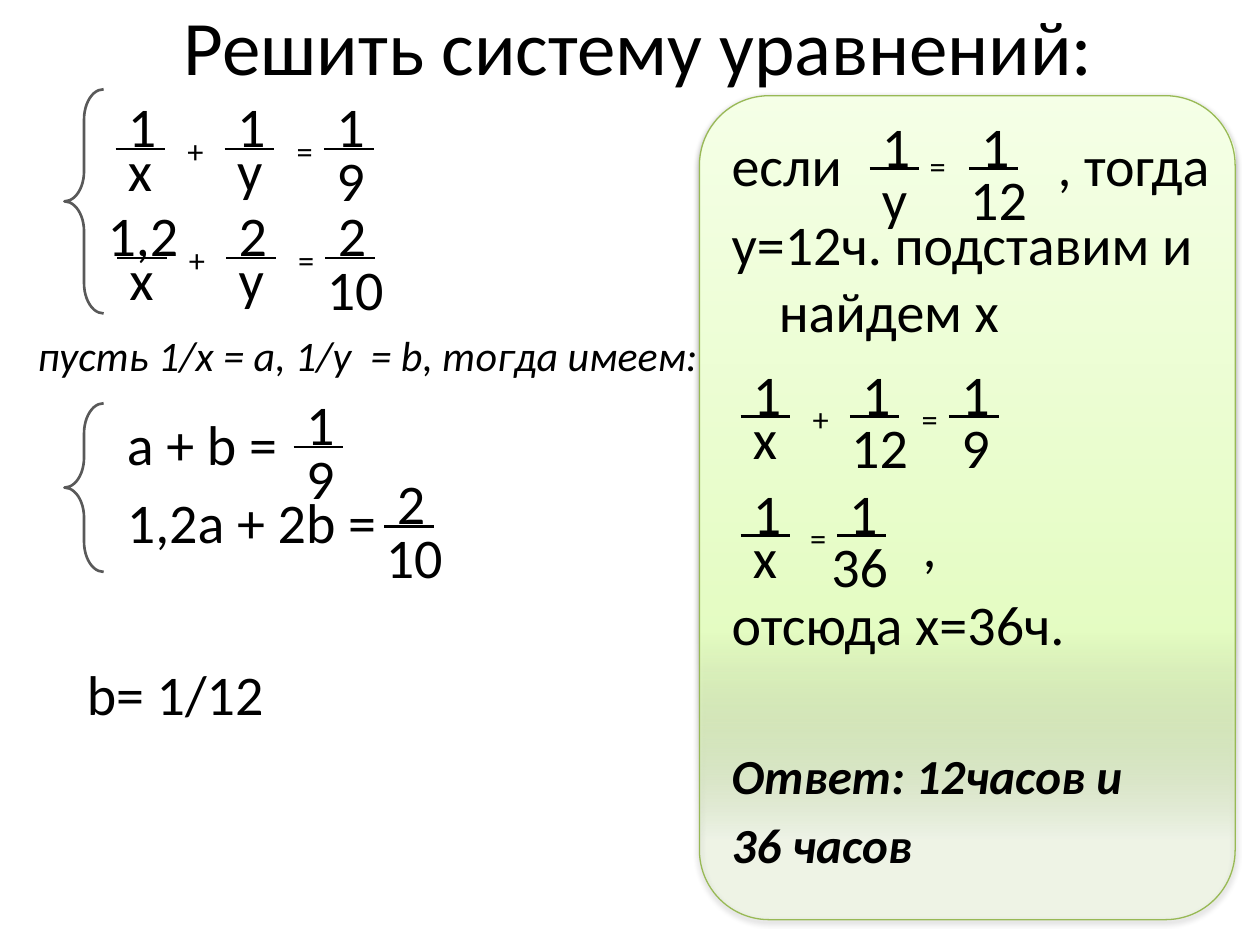
from lxml.etree import SubElement
from pptx import Presentation
from pptx.dml.color import RGBColor
from pptx.enum.shapes import MSO_CONNECTOR, MSO_SHAPE
from pptx.enum.text import MSO_ANCHOR, PP_ALIGN
from pptx.oxml.ns import qn
from pptx.util import Cm, Pt

FONT = "Calibri"
COLORS = {"text": "000000", "brace": "595959", "edge": "98B955"}
# Panel gradient from the bottom up: place %, colour, opacity %
STOPS = [(10, "DAFDA7", 14), (35, "E4FCC2", 100), (100, "F5FFE7", 100)]

TITLE = "Решить систему уравнений:"
HANG = 0.95

# Sums a + b = c: left, bar height, three fractions
SUMS = [
    (2.33, 3.0, [("1", "х"), ("1", "у"), ("1", "9")]),
    (2.36, 5.2, [("1,2", "х"), ("2", "у"), ("2", "10")]),
    (14.93, 8.4, [("1", "х"), ("1", "12"), ("1", "9")]),
]
BARS = (0, 2.2, 4.2)
SIGNS = ((1.2, "+"), (3.4, "="))

# Single fractions: left, bar height, top, bottom, gap below the bar, shift
LOW, HIGH = -0.2, -0.39
SINGLES = [
    (5.92, 9.01, "1", "9", LOW),
    (7.75, 10.61, "2", "10", LOW),
    (17.53, 3.4, "1", "у", LOW),
    (19.53, 3.4, "1", "12", LOW),
    (14.93, 10.8, "1", "х", HIGH),
    (16.87, 10.8, "1", "36", LOW, -0.14),
]
EQUALS = [(18.49, 2.92), (16.08, 10.41)]

# Braces: top, height
BRACES = [(1.8, 4.52), (8.13, 3.4)]

# Free texts: box, lines, size, italic, line spacing
NOTES = [
    ((0.51, 6.52, 14.6, 3.99), ["пусть 1/х = а, 1/у  = b, тогда имеем:"], 24, True, 1),
    ((2.31, 8.13, 5.59, 3.99), ["а + b =", "1,2а + 2b ="], 32, False, 1),
    ((1.5, 13.33, 4.6, 1.6), ["b= 1/12"], 32, False, 0.9),
    ((21.07, 2.51, 4, 1.68), [", тогда"], 32, False, 1),
]

# Panel lines: text, size, bold italic, space before (None: 20 %), margin, indent
PANEL = [
    ("если", 32, False, None, HANG, -HANG),
    ("у=12ч. подставим и найдем х", 32, False, None, HANG, -HANG),
    (",", 32, False, 95.7, 3.85, 0),
    ("отсюда х=36ч.", 32, False, None, HANG, -HANG),
    ("Ответ: 12часов и", 28, True, 50.8, HANG, -HANG),
    ("36 часов", 28, True, None, HANG, -HANG),
]

deck = Presentation()
deck.slide_width, deck.slide_height = Cm(25.4), Cm(19.05)
slide = deck.slides.add_slide(deck.slide_layouts[6])
shapes = slide.shapes


def rgb(name):
    return RGBColor.from_string(COLORS[name])


def frame(x, y, w, h):
    body = shapes.add_textbox(Cm(x), Cm(y), Cm(w), Cm(h)).text_frame
    body.word_wrap = True
    return body


def style(para, size, margin=HANG, indent=-HANG, before=None, tight=1):
    """Set font, indents and spacing of a paragraph."""
    font = para.font
    font.name, font.size, font.color.rgb = FONT, Pt(size), rgb("text")
    props = para._p.get_or_add_pPr()
    props.set("marL", str(Cm(margin)))
    props.set("indent", str(Cm(indent)))
    if tight != 1:
        para.line_spacing = tight
    para.space_before = Pt(before or 0)
    if before is None:
        space = props.find(qn("a:spcBef"))
        space.clear()
        SubElement(space, qn("a:spcPct"), val="20000")


def write(box, lines, size, italic=False, tight=1):
    body = frame(*box)
    for i, line in enumerate(lines):
        para = body.add_paragraph() if i else body.paragraphs[0]
        para.text = line
        style(para, size, tight=tight)
        para.font.italic = italic


def frac(x, y, top, low, gap, shift=0):
    for text, dx, dy in ((top, 0, -1.28), (low, shift, gap)):
        more = len(text) - 1
        write((x + dx - 0.22 * more, y + dy, 1.22 + 0.8 * more, 1.68), [text], 32)
    bar = shapes.add_connector(MSO_CONNECTOR.STRAIGHT, Cm(x), Cm(y), Cm(x + 1), Cm(y))
    bar.line.color.rgb, bar.line.width = rgb("text"), Pt(1.5)
    SubElement(bar._element.spPr, qn("a:effectLst"))


def sign(x, y, text):
    write((x, y, 1, 1), [text], 18.5, tight=0.9)


def panel():
    card = shapes.add_shape(MSO_SHAPE.ROUNDED_RECTANGLE, Cm(14.1), Cm(1.93), Cm(10.8), Cm(16.61))
    card.adjustments[0] = 0.13
    card.line.color.rgb, card.line.width = rgb("edge"), Pt(0.75)
    card.fill.gradient()
    card.fill.gradient_angle = 90
    props = card._element.spPr
    stops = props.find(qn("a:gradFill")).find(qn("a:gsLst"))
    stops.clear()
    for place, tone, alpha in STOPS:
        stop = SubElement(stops, qn("a:gs"), pos=str(place * 1000))
        color = SubElement(stop, qn("a:srgbClr"), val=tone)
        SubElement(color, qn("a:alpha"), val=str(alpha * 1000))
    card.shadow.inherit = False
    shade = SubElement(props.find(qn("a:effectLst")), qn("a:outerShdw"),
                       blurRad=str(Pt(3.1)), dist=str(Pt(1.6)), dir="5400000", rotWithShape="0")
    color = SubElement(shade, qn("a:srgbClr"), val=COLORS["text"])
    SubElement(color, qn("a:alpha"), val="38000")

    body = frame(14.5, 2.51, 10.6, 16.54)
    for i, (text, size, strong, before, margin, indent) in enumerate(PANEL):
        para = body.add_paragraph() if i else body.paragraphs[0]
        para.text = text
        style(para, size, margin, indent, before)
        para.font.bold = para.font.italic = strong


head = frame(1.45, -0.69, 22.86, 3.18)
head.vertical_anchor = MSO_ANCHOR.MIDDLE
para = head.paragraphs[0]
para.text, para.alignment = TITLE, PP_ALIGN.CENTER
style(para, 44, 0, 0, 0)

panel()
for note in NOTES:
    write(*note)
for top, tall in BRACES:
    brace = shapes.add_shape(MSO_SHAPE.LEFT_BRACE, Cm(1.3), Cm(top), Cm(0.79), Cm(tall))
    brace.adjustments[0] = 0.77
    brace.fill.background()
    brace.line.color.rgb, brace.line.width = rgb("brace"), Pt(1.5)
    brace.shadow.inherit = False
for x, y, parts in SUMS:
    for dx, (top, low) in zip(BARS, parts):
        frac(x + dx, y, top, low, HIGH if low.isalpha() else LOW)
    for dx, text in SIGNS:
        sign(x + dx, y - 0.39, text)
for single in SINGLES:
    frac(*single)
for x, y in EQUALS:
    sign(x, y, "=")

deck.save("out.pptx")
